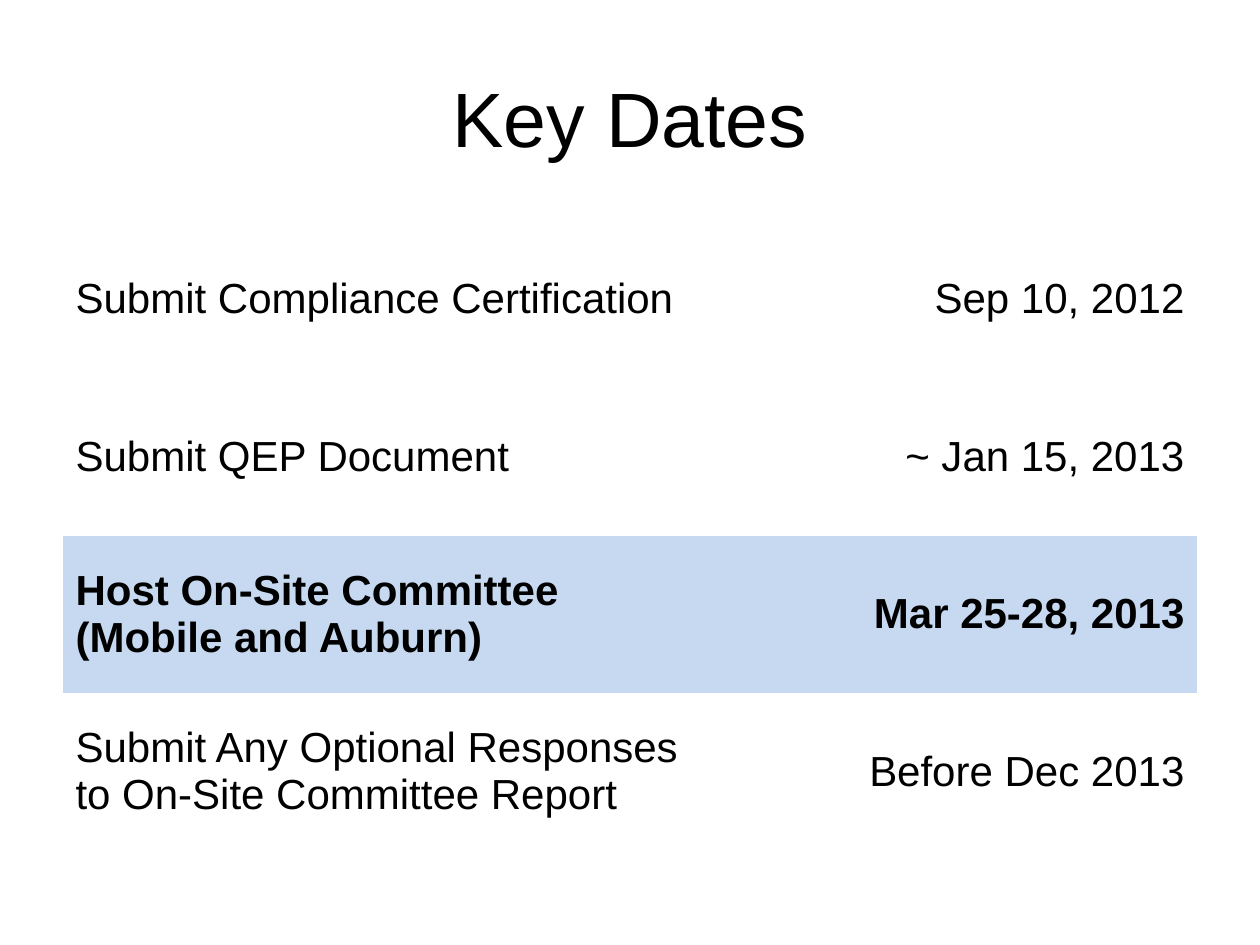
from dataclasses import dataclass

from pptx import Presentation
from pptx.dml.color import RGBColor
from pptx.enum.text import MSO_ANCHOR, PP_ALIGN
from pptx.oxml.ns import qn
from pptx.util import Inches, Pt


@dataclass(frozen=True)
class Theme:
    """Hold the colours, font and type sizes."""

    font: str = "Arial"
    text: str = "000000"
    background: str = "FFFFFF"
    highlight: str = "C6D9F1"
    title_size: int = 44
    body_size: int = 24
    plain_table: str = "{2D5ABB26-0587-4C30-8999-92F81FD0307C}"


def write_text(text_frame, text, *, theme, size, align=PP_ALIGN.LEFT, bold=False):
    """Write one paragraph per line of text in the given format."""
    text_frame.text = text
    text_frame.word_wrap = True
    for paragraph in text_frame.paragraphs:
        paragraph.alignment = align
        for run in paragraph.runs:
            run.font.name = theme.font
            run.font.size = Pt(size)
            run.font.bold = bold
            run.font.color.rgb = RGBColor.from_string(theme.text)


class SlideBuilder:
    """Build the elements of one slide in a shared style."""

    def __init__(self, presentation, theme):
        """Add a title-only slide with a plain background."""
        self.theme = theme
        self.slide = presentation.slides.add_slide(presentation.slide_layouts[5])
        fill = self.slide.background.fill
        fill.solid()
        fill.fore_color.rgb = RGBColor.from_string(theme.background)

    def title(self, text, left, top, width, height):
        """Place and fill the title placeholder."""
        shape = self.slide.shapes.title
        shape.left, shape.top = Inches(left), Inches(top)
        shape.width, shape.height = Inches(width), Inches(height)
        write_text(shape.text_frame, text, theme=self.theme,
                   size=self.theme.title_size, align=PP_ALIGN.CENTER)
        shape.text_frame.vertical_anchor = MSO_ANCHOR.MIDDLE

    def date_table(self, entries, left, top, column_widths, row_height):
        """Add a borderless table of tasks and dates with a spacer column."""
        frame = self.slide.shapes.add_table(
            len(entries), len(column_widths), Inches(left), Inches(top),
            Inches(sum(column_widths)), Inches(row_height * len(entries)))
        table = frame.table
        table.first_row = table.horz_banding = False
        for style in frame.element.iter(qn("a:tableStyleId")):
            style.text = self.theme.plain_table
        for column, width in zip(table.columns, column_widths):
            column.width = Inches(width)
        for row, (task, date, highlighted) in zip(table.rows, entries):
            row.height = Inches(row_height)
            task_cell, spacer_cell, date_cell = row.cells
            self.cell(task_cell, task, PP_ALIGN.LEFT, highlighted)
            self.cell(spacer_cell, "", PP_ALIGN.LEFT, highlighted)
            self.cell(date_cell, date, PP_ALIGN.RIGHT, highlighted)

    def cell(self, cell, text, align, highlighted):
        """Fill one table cell, bold and shaded when highlighted."""
        cell.vertical_anchor = MSO_ANCHOR.MIDDLE
        if highlighted:
            cell.fill.solid()
            cell.fill.fore_color.rgb = RGBColor.from_string(self.theme.highlight)
        else:
            cell.fill.background()
        write_text(cell.text_frame, text, theme=self.theme,
                   size=self.theme.body_size, align=align, bold=highlighted)


def main():
    """Create the key dates slide and save it."""
    presentation = Presentation()
    presentation.slide_width, presentation.slide_height = Inches(10), Inches(7.5)
    builder = SlideBuilder(presentation, Theme())
    builder.title("Key Dates", 0.5, 0.3, 9, 1.25)
    entries = [
        ("Submit Compliance Certification", "Sep 10, 2012", False),
        ("Submit QEP Document", "~ Jan 15, 2013", False),
        ("Host On-Site Committee\n(Mobile and Auburn)", "Mar 25-28, 2013", True),
        ("Submit Any Optional Responses\nto On-Site Committee Report",
         "Before Dec 2013", False),
    ]
    builder.date_table(entries, 0.5, 1.75, (5.75, 0.25, 3), 1.25)
    presentation.save("out.pptx")


if __name__ == "__main__":
    main()
